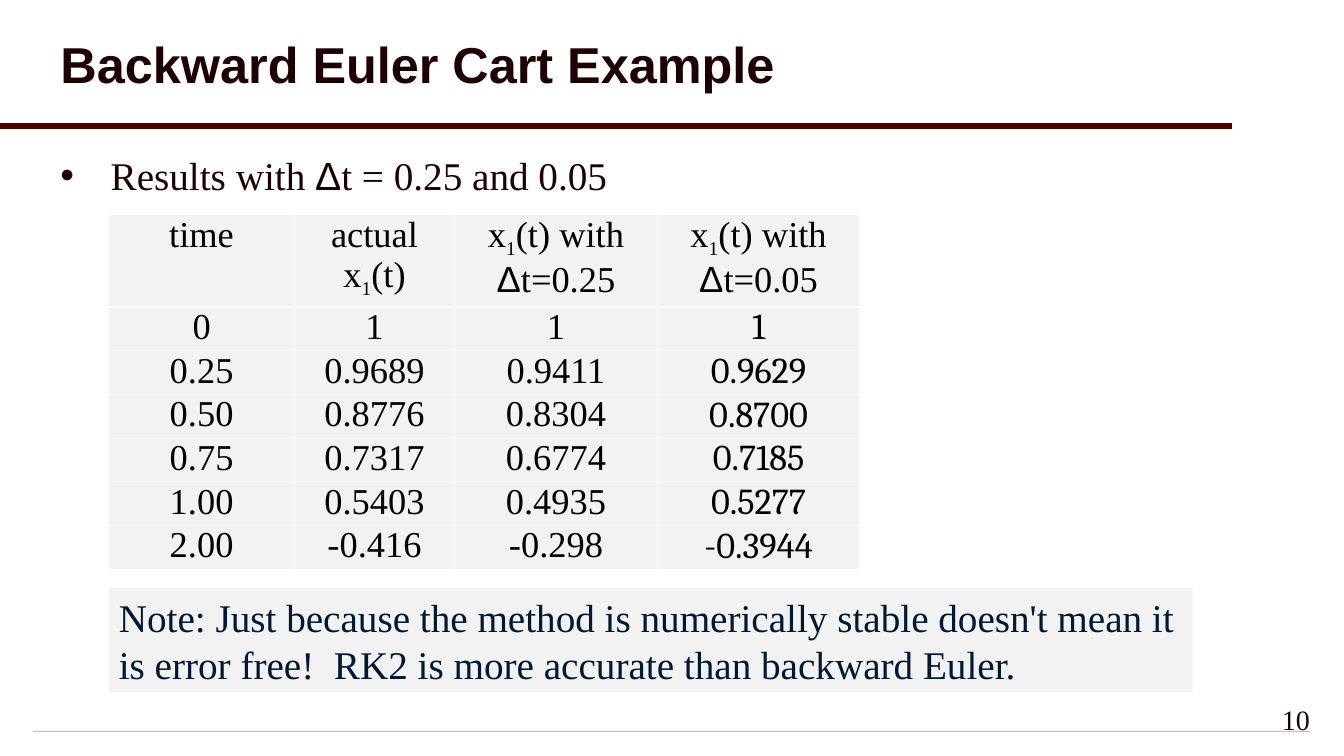
from dataclasses import dataclass
from itertools import groupby

from lxml import etree
from pptx import Presentation
from pptx.dml.color import RGBColor
from pptx.enum.shapes import MSO_CONNECTOR, MSO_SHAPE
from pptx.enum.text import MSO_ANCHOR, MSO_AUTO_SIZE, PP_ALIGN
from pptx.oxml.ns import qn
from pptx.util import Inches, Pt

LEFT, CENTER, RIGHT = PP_ALIGN.LEFT, PP_ALIGN.CENTER, PP_ALIGN.RIGHT
TOP, MIDDLE = MSO_ANCHOR.TOP, MSO_ANCHOR.MIDDLE
NO_AUTOSIZE = MSO_AUTO_SIZE.NONE
RECTANGLE, STRAIGHT = MSO_SHAPE.RECTANGLE, MSO_CONNECTOR.STRAIGHT


@dataclass(frozen=True)
class Theme:
    """Colours, fonts and type sizes of the deck."""
    ink: str = "1E0000"
    maroon: str = "500000"
    navy: str = "001933"
    black: str = "000000"
    white: str = "FFFFFF"
    panel: str = "F2F2F2"
    hairline: str = "BFBFBF"
    sans: str = "Arial"
    serif: str = "Times New Roman"
    digits: str = "Cambria"
    title: int = 36
    body: int = 28
    cell: int = 26
    subscript: int = 24
    number: int = 20


THEME = Theme()
HEADERS = ["time", "actual x₁(t)", "x₁(t) with Δt=0.25", "x₁(t) with Δt=0.05"]
RESULTS = [
    ["0", "1", "1", "1"],
    ["0.25", "0.9689", "0.9411", "0.9629"],
    ["0.50", "0.8776", "0.8304", "0.8700"],
    ["0.75", "0.7317", "0.6774", "0.7185"],
    ["1.00", "0.5403", "0.4935", "0.5277"],
    ["2.00", "-0.416", "-0.298", "-0.3944"],
]
COLUMN_WIDTHS = [1.84, 1.59, 2.01, 2.01]
HEADER_HEIGHT, ROW_HEIGHT = 0.85, 0.415
NOTE = ("Note: Just because the method is numerically stable doesn't mean it "
        "is error free!  RK2 is more accurate than backward Euler.")


def style_font(font, size, color, name=THEME.serif, bold=False):
    """Set the size, colour, typeface and weight of a font."""
    font.size, font.name, font.bold = Pt(size), name, bold
    font.color.rgb = RGBColor.from_string(color)


def write(para, text, size, color, name=THEME.serif, align=LEFT):
    """Write text, setting Δ in the sans font and ₁ as a subscript."""
    para.alignment = align
    style_font(para.font, size, color, name)
    for symbol, letters in groupby(text, lambda char: char if char in "Δ₁" else ""):
        span = para.add_run()
        span.text = "1" if symbol == "₁" else "".join(letters)
        if symbol == "Δ":
            span.font.name = THEME.sans
        elif symbol == "₁":
            span.font.size = Pt(THEME.subscript)
            span._r.get_or_add_rPr().set("baseline", "-25000")


def add_bullet(para, color, indent):
    """Give a paragraph a round bullet with a hanging indent."""
    props = para._p.get_or_add_pPr()
    props.set("marL", str(indent))
    props.set("indent", str(-indent))
    bullet_color = etree.SubElement(props, qn("a:buClr"))
    etree.SubElement(bullet_color, qn("a:srgbClr"), val=color)
    etree.SubElement(props, qn("a:buFont"), typeface=THEME.sans)
    etree.SubElement(props, qn("a:buChar"), char="•")


def add_panel(page, left, top, width, height, color):
    """Add a plain filled rectangle."""
    panel = page.shapes.add_shape(
        RECTANGLE, Inches(left), Inches(top), Inches(width), Inches(height))
    panel.shadow.inherit = False
    panel.fill.solid()
    panel.fill.fore_color.rgb = RGBColor.from_string(color)
    panel.line.fill.background()
    return panel


def add_text(page, left, top, width, height):
    """Add a wrapping text box and return its first paragraph."""
    box = page.shapes.add_textbox(
        Inches(left), Inches(top), Inches(width), Inches(height))
    box.text_frame.word_wrap = True
    return box.text_frame.paragraphs[0]


def build_header(page, left, top, width, height):
    """Place the title and the heavy rule below it."""
    title = page.shapes.title
    title.left, title.top = Inches(left), Inches(top)
    title.width, title.height = Inches(width), Inches(height)
    frame = title.text_frame
    frame.text = "Backward Euler Cart Example"
    frame.vertical_anchor, frame.auto_size = MIDDLE, NO_AUTOSIZE
    para = frame.paragraphs[0]
    para.alignment, para.line_spacing = LEFT, 0.9
    style_font(para.font, THEME.title, THEME.ink, THEME.sans, True)

    bottom = Inches(top + height)
    rule = page.shapes.add_connector(STRAIGHT, 0, bottom, Inches(width), bottom)
    rule.line.color.rgb = RGBColor.from_string(THEME.maroon)
    rule.line.width = Pt(4)
    etree.SubElement(rule._element.spPr, qn("a:effectLst"))


def build_bullet(page, left, top, width, height):
    """Place the bulleted statement."""
    para = add_text(page, left, top, width, height)
    add_bullet(para, THEME.ink, Inches(0.5))
    write(para, "Results with Δt = 0.25 and 0.05", THEME.body, THEME.ink)


def style_cell(cell):
    """Fill a cell, set its margins and draw its white borders."""
    cell.margin_left = cell.margin_right = Inches(0.07)
    cell.margin_top = cell.margin_bottom = 0
    cell.vertical_anchor = TOP
    props = cell._tc.get_or_add_tcPr()
    for side in ("a:lnL", "a:lnR", "a:lnT", "a:lnB"):
        border = etree.SubElement(props, qn(side), w=str(Pt(1)))
        paint = etree.SubElement(border, qn("a:solidFill"))
        etree.SubElement(paint, qn("a:srgbClr"), val=THEME.white)
    cell.fill.solid()
    cell.fill.fore_color.rgb = RGBColor.from_string(THEME.panel)


def build_table(page, left, top):
    """Place the table of computed positions."""
    rows = [HEADERS] + RESULTS
    height = HEADER_HEIGHT + ROW_HEIGHT * len(RESULTS)
    table = page.shapes.add_table(
        len(rows), len(HEADERS), Inches(left), Inches(top),
        Inches(sum(COLUMN_WIDTHS)), Inches(height)).table
    table.first_row = table.horz_banding = False
    for column, width in zip(table.columns, COLUMN_WIDTHS):
        column.width = Inches(width)
    for r, values in enumerate(rows):
        table.rows[r].height = Inches(ROW_HEIGHT if r else HEADER_HEIGHT)
        for c, value in enumerate(values):
            cell = table.cell(r, c)
            style_cell(cell)
            fine_step = r > 0 and c == len(HEADERS) - 1
            name = THEME.digits if fine_step else THEME.serif
            write(cell.text_frame.paragraphs[0], value,
                  THEME.cell, THEME.black, name, CENTER)


def build_note(page, left, top, width, height):
    """Place the shaded remark under the table."""
    frame = add_panel(page, left, top, width, height, THEME.panel).text_frame
    frame.word_wrap, frame.vertical_anchor = True, MIDDLE
    write(frame.paragraphs[0], NOTE, THEME.body, THEME.navy)


def build_footer(page, left, top, width):
    """Place the thin bottom rule and the page number at its right end."""
    add_panel(page, left, top, width, 0.01, THEME.hairline)
    para = add_text(page, left + width - 0.57, top - 0.33, 0.67, 0.5)
    write(para, "10", THEME.number, THEME.ink, align=RIGHT)


def main():
    """Build and save the slide."""
    deck = Presentation()
    deck.slide_width, deck.slide_height = Inches(13.33), Inches(7.5)
    page = deck.slides.add_slide(deck.slide_layouts.get_by_name("Title Only"))
    build_header(page, 0.5, 0.08, 12.22, 1.17)
    build_bullet(page, 0.5, 1.45, 12.36, 0.6)
    build_table(page, 1.08, 2.13)
    build_note(page, 1.08, 5.83, 10.75, 1.04)
    build_footer(page, 0.33, 7.25, 12.66)
    deck.save("out.pptx")


if __name__ == "__main__":
    main()
